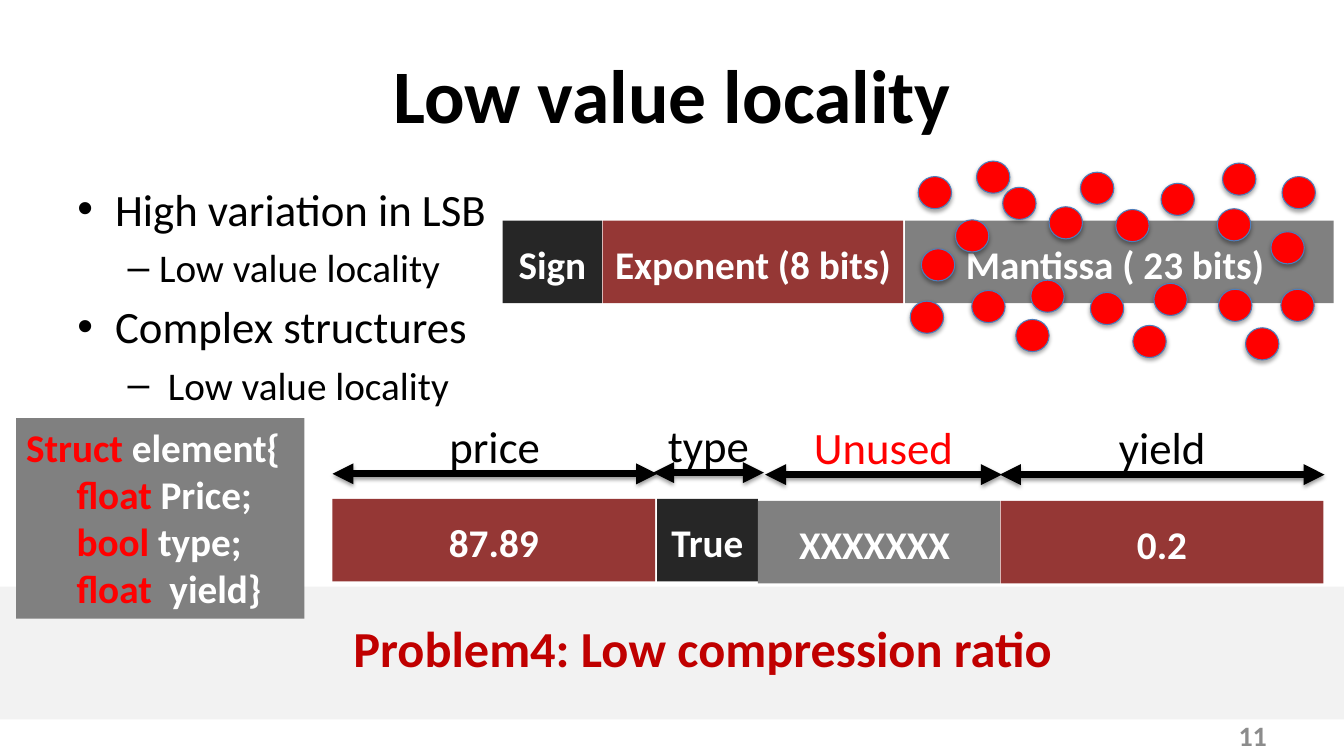
from dataclasses import dataclass

import lxml.etree
import pptx
import pptx.dml.color
import pptx.enum.shapes
import pptx.enum.text
import pptx.oxml.ns
import pptx.util

Cm = pptx.util.Cm
Pt = pptx.util.Pt
qn = pptx.oxml.ns.qn
SHAPE = pptx.enum.shapes.MSO_SHAPE
ALIGN = pptx.enum.text.PP_ALIGN
ANCHOR = pptx.enum.text.MSO_ANCHOR

COLOURS = {
    "black": "000000",
    "white": "FFFFFF",
    "number": "8C8C8C",
    "band": "F2F2F2",
    "problem": "C00000",
    "dark": "262626",
    "brick": "953735",
    "grey": "808080",
    "red": "FF0000",
    "outline": "4B7EBC",
}


@dataclass
class Cell:
    text: str
    left: float
    top: float
    width: float
    fill: str


@dataclass
class Span:
    label: str
    left: float
    y: float
    width: float
    colour: str = "black"


@dataclass
class Bullet:
    text: str
    level: int


FLOAT_PARTS = [
    Cell("Sign", 12.67, 5.56, 2.5, "dark"),
    Cell("Exponent (8 bits)", 15.19, 5.56, 7.57, "brick"),
    Cell("Mantissa ( 23 bits) ", 22.81, 5.56, 10.8, "grey"),
]
STRUCT_PARTS = [
    Cell("87.89", 8.38, 12.57, 8.13, "brick"),
    Cell("True", 16.56, 12.57, 2.54, "dark"),
    Cell("XXXXXXX ", 19.1, 12.62, 6.1, "grey"),
    Cell("0.2", 25.22, 12.62, 8.13, "brick"),
]
SPANS = [
    Span("price", 8.38, 11.94, 8.18),
    Span("type", 16.46, 11.91, 2.79),
    Span("Unused", 19.28, 11.96, 5.97, "red"),
    Span("yield", 25.2, 11.96, 8.18),
]
BULLETS = [
    Bullet("High variation in LSB", 0),
    Bullet("Low value locality", 1),
    Bullet("Complex structures", 0),
    Bullet(" Low value locality", 1),
]
DOTS = [
    (23.14, 4.45), (23.22, 6.27), (25.27, 4.72), (24.49, 7.32), (26.44, 5.21), (27.23, 4.34),
    (27.48, 7.37), (25.98, 7.06), (24.08, 5.54), (28.12, 5.28), (29.26, 4.62), (29.08, 7.14),
    (30.68, 5.26), (30.71, 7.29), (32.03, 5.84), (32.31, 4.45), (22.94, 7.59), (32.28, 7.29),
    (24.61, 4.06), (25.6, 8.05), (28.55, 8.2), (30.81, 4.11), (31.39, 8.26),
]
CODE = [
    [("Struct", "red"), (" element{", "white")],
    [("\t", "red"), ("float", "red"), (" Price;", "white")],
    [("\t", "red"), ("bool", "red"), (" type;", "white")],
    [("\t", "red"), ("float ", "red"), (" yield}", "white")],
]


def rgb(name: str):
    return pptx.dml.color.RGBColor.from_string(COLOURS[name])


def write(p, text: str, *, size: float, colour: str = "black", bold: bool = False, align=None) -> None:
    r = p.add_run()
    r.text = text
    r.font.name = "Calibri"
    r.font.size = Pt(size)
    r.font.bold = bold
    r.font.color.rgb = rgb(colour)
    if align is not None:
        p.alignment = align


def add_shadow(effects, alpha: int, distance: float) -> None:
    shadow = lxml.etree.SubElement(
        effects, qn("a:outerShdw"), blurRad=str(Pt(3.1)), dist=str(Pt(distance)), dir="5400000", rotWithShape="0"
    )
    colour = lxml.etree.SubElement(shadow, qn("a:srgbClr"), val=COLOURS["black"])
    lxml.etree.SubElement(colour, qn("a:alpha"), val=str(alpha * 1000))


def add_block(s, kind, left: float, top: float, width: float, height: float, fill: str):
    sp = s.shapes.add_shape(kind, Cm(left), Cm(top), Cm(width), Cm(height))
    sp.shadow.inherit = False
    sp.fill.solid()
    sp.fill.fore_color.rgb = rgb(fill)
    sp.line.fill.background()
    sp.text_frame.word_wrap = True
    return sp


def add_text_frame(s, left: float, top: float, width: float, height: float):
    tf = s.shapes.add_textbox(Cm(left), Cm(top), Cm(width), Cm(height)).text_frame
    tf.word_wrap = True
    return tf


def add_title(s) -> None:
    sp = s.shapes.title
    sp.left, sp.top, sp.width, sp.height = Cm(1.7), Cm(0.76), Cm(30.48), Cm(3.18)
    sp.text_frame.vertical_anchor = ANCHOR.MIDDLE
    write(sp.text_frame.paragraphs[0], "Low value locality", size=54, bold=True, align=ALIGN.CENTER)


def add_bullets(s) -> None:
    tf = add_text_frame(s, 1.7, 4.45, 30.48, 12.57)
    for i, bullet in enumerate(BULLETS):
        p = tf.paragraphs[0] if i == 0 else tf.add_paragraph()
        size, margin, hang, mark = [(32, 0.95, 0.95, "•"), (28, 2.06, 0.79, "–")][bullet.level]
        p.level = bullet.level
        p.space_before = Pt(size * 0.2)
        pPr = p._p.get_or_add_pPr()
        pPr.set("marL", str(Cm(margin)))
        pPr.set("indent", str(-Cm(hang)))
        lxml.etree.SubElement(pPr, qn("a:buFont"), typeface="Arial")
        lxml.etree.SubElement(pPr, qn("a:buChar"), char=mark)
        write(p, bullet.text, size=size)


def add_cell(s, cell: Cell) -> None:
    tf = add_block(s, SHAPE.RECTANGLE, cell.left, cell.top, cell.width, 2.08, cell.fill).text_frame
    tf.vertical_anchor = ANCHOR.MIDDLE
    p = tf.paragraphs[0]
    p.line_spacing = 1.07
    p.space_after = Pt(8)
    write(p, cell.text, size=28, colour="white", bold=True, align=ALIGN.CENTER)


def add_dot(s, left: float, top: float) -> None:
    sp = add_block(s, SHAPE.OVAL, left, top, 0.84, 0.81, "red")
    sp.line.color.rgb = rgb("outline")
    sp.line.width = Pt(0.75)
    add_shadow(sp._element.spPr.find(qn("a:effectLst")), 35, 1.8)


def add_span(s, span: Span) -> None:
    c = s.shapes.add_connector(
        pptx.enum.shapes.MSO_CONNECTOR.STRAIGHT, Cm(span.left), Cm(span.y), Cm(span.left + span.width), Cm(span.y)
    )
    c.line.color.rgb = rgb("black")
    c.line.width = Pt(5)
    for end in ("a:headEnd", "a:tailEnd"):
        lxml.etree.SubElement(c.line._get_or_add_ln(), qn(end), type="triangle")
    add_shadow(lxml.etree.SubElement(c._element.spPr, qn("a:effectLst")), 38, 1.6)
    tf = add_text_frame(s, span.left, span.y - 1.52, span.width, 1.63)
    write(tf.paragraphs[0], span.label, size=32, colour=span.colour, align=ALIGN.CENTER)


def add_problem(s) -> None:
    tf = add_block(s, SHAPE.RECTANGLE, 0, 14.78, 33.87, 3.35, "band").text_frame
    tf.margin_left = tf.margin_right = 0
    tf.vertical_anchor = ANCHOR.MIDDLE
    p = tf.paragraphs[0]
    p.line_spacing = Pt(35)
    p._p.get_or_add_pPr().set("marL", str(Cm(1.27)))
    write(p, " Problem4: Low compression ratio", size=36, colour="problem", bold=True, align=ALIGN.CENTER)


def add_code(s) -> None:
    tf = add_block(s, SHAPE.RECTANGLE, 0.41, 10.54, 7.26, 5.05, "grey").text_frame
    tf.vertical_anchor = ANCHOR.TOP
    for i, line in enumerate(CODE):
        p = tf.paragraphs[0] if i == 0 else tf.add_paragraph()
        tabs = lxml.etree.SubElement(p._p.get_or_add_pPr(), qn("a:tabLst"))
        lxml.etree.SubElement(tabs, qn("a:tab"), pos=str(Cm(1.27)), algn="l")
        for text, colour in line:
            write(p, text, size=28, colour=colour, bold=True, align=ALIGN.LEFT)


def main() -> None:
    prs = pptx.Presentation()
    prs.slide_width, prs.slide_height = Cm(33.87), Cm(19.05)
    s = prs.slides.add_slide(prs.slide_layouts[5])
    add_title(s)
    add_bullets(s)
    tf = add_text_frame(s, 24.28, 18.03, 7.9, 1.02)
    tf.vertical_anchor = ANCHOR.MIDDLE
    write(tf.paragraphs[0], "11", size=20, colour="number", bold=True, align=ALIGN.RIGHT)
    add_problem(s)
    for cell in FLOAT_PARTS:
        add_cell(s, cell)
    for left, top in DOTS:
        add_dot(s, left, top)
    add_code(s)
    for cell in STRUCT_PARTS:
        add_cell(s, cell)
    for span in SPANS:
        add_span(s, span)
    prs.save("out.pptx")


if __name__ == "__main__":
    main()
